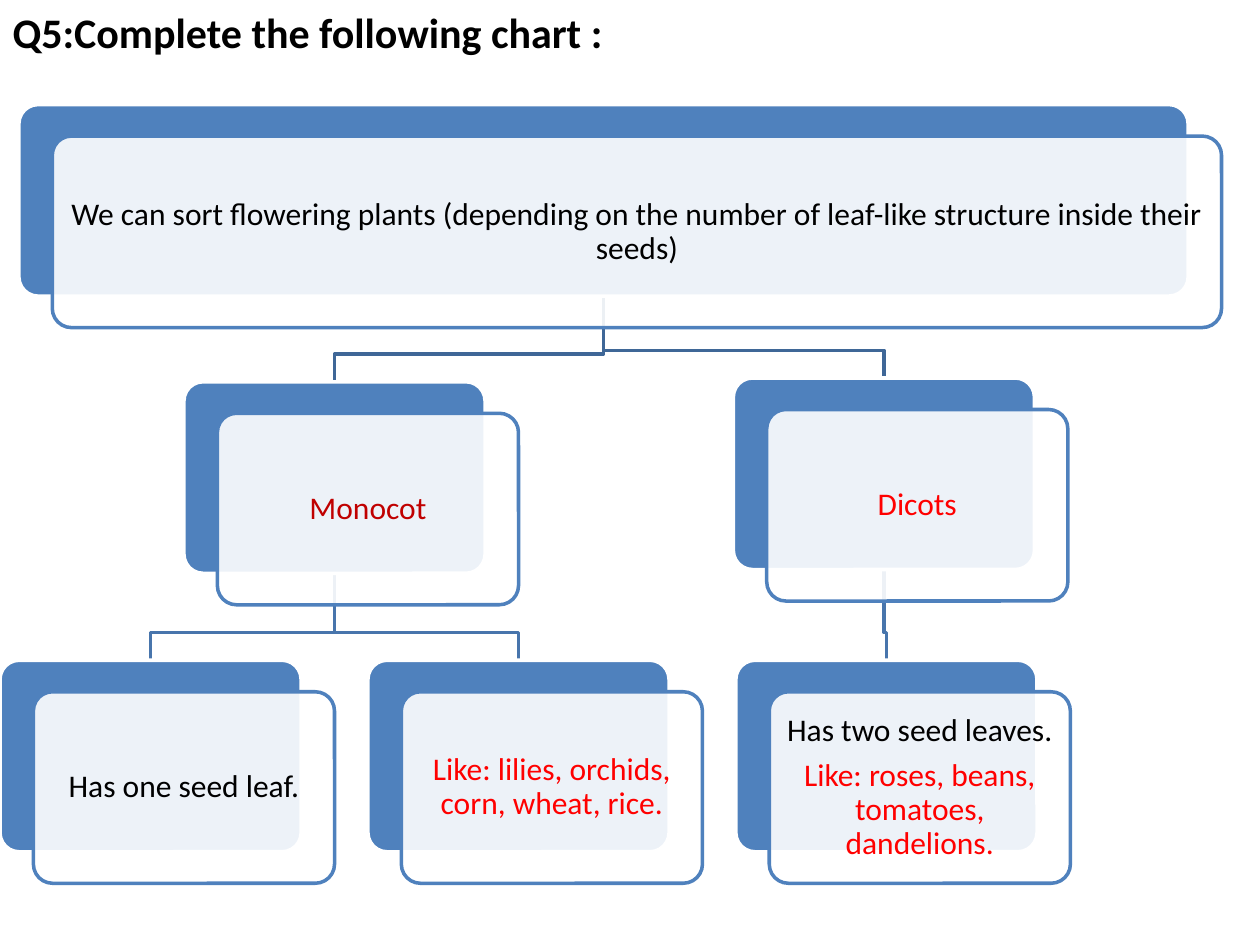
import pptx
import pptx.dml.color
import pptx.enum.shapes
import pptx.enum.text
import pptx.util
from lxml import etree

Inches = pptx.util.Inches
Pt = pptx.util.Pt

THEME = {
    "font": "Calibri",
    "title_size": 24,
    "card_size": 18,
    "line_width": 2,
    "black": "000000",
    "white": "FFFFFF",
    "red": "FF0000",
    "dark_red": "C00000",
    "blue": "4F81BD",
    "upper_link": "3F6797",
    "lower_link": "4875AC",
}

SLIDE_WIDTH, SLIDE_HEIGHT = 10, 7.5
CARD_WIDTH, ROOT_WIDTH, CARD_HEIGHT = 2.39, 9.28, 1.52
COLUMN_STEP, LEAF_TOP = 2.92, 5.24
FACE_SHIFT_X, FACE_SHIFT_Y = 0.265, 0.25
BEND_HEIGHT = 0.22

TITLE = "Q5:Complete the following chart :"
CARDS = {
    "root": (0.15, 0.83, ROOT_WIDTH, [
        ("We can sort flowering plants (depending on the number of "
         "leaf-like structure inside their seeds)", "black")]),
    "monocot": (COLUMN_STEP / 2, 3.03, CARD_WIDTH, [("Monocot", "dark_red")]),
    "one leaf": (0, LEAF_TOP, CARD_WIDTH, [("Has one seed leaf.", "black")]),
    "monocot examples": (COLUMN_STEP, LEAF_TOP, CARD_WIDTH, [
        ("Like: lilies, orchids, corn, wheat, rice.", "red")]),
    "dicots": (5.82, 3, CARD_WIDTH, [("Dicots", "red")]),
    "two leaves": (2 * COLUMN_STEP, LEAF_TOP, CARD_WIDTH, [
        ("Has two seed leaves.", "black"),
        ("Like: roses, beans, tomatoes, dandelions.", "red")]),
}
LINKS = [
    ("dicots", "two leaves", "lower_link"),
    ("root", "dicots", "upper_link"),
    ("monocot", "monocot examples", "lower_link"),
    ("monocot", "one leaf", "lower_link"),
    ("root", "monocot", "upper_link"),
]


def color(name):
    return pptx.dml.color.RGBColor.from_string(THEME[name])


def format_text(paragraph, size, color_name, bold=False):
    for run in paragraph.runs:
        run.font.name = THEME["font"]
        run.font.size = Pt(THEME[size])
        run.font.bold = bold
        run.font.color.rgb = color(color_name)


def set_line(shape, color_name):
    shape.shadow.inherit = False
    shape.line.color.rgb = color(color_name)
    shape.line.width = Pt(THEME["line_width"])


def add_title(slide):
    title = slide.shapes.title
    title.element.getparent().remove(title.element)
    heading = slide.placeholders[1]
    heading.left = heading.top = 0
    heading.width, heading.height = Inches(SLIDE_WIDTH), Inches(SLIDE_HEIGHT)
    heading.text_frame.text = TITLE
    heading.text_frame.vertical_anchor = pptx.enum.text.MSO_ANCHOR.TOP
    paragraph = heading.text_frame.paragraphs[0]
    paragraph.alignment = pptx.enum.text.PP_ALIGN.LEFT
    paragraph.space_before = Pt(0.2 * THEME["title_size"])
    format_text(paragraph, "title_size", "black", bold=True)


def add_link(slide, parent, child, color_name):
    parent_left, parent_top, parent_width, _ = CARDS[parent]
    child_left, child_top, child_width, _ = CARDS[child]
    start_x = Inches(parent_left + parent_width / 2)
    end_x = Inches(child_left + child_width / 2)
    bend_y = Inches(child_top - BEND_HEIGHT)
    builder = slide.shapes.build_freeform(start_x, Inches(parent_top + CARD_HEIGHT))
    builder.add_line_segments(
        [(start_x, bend_y), (end_x, bend_y), (end_x, Inches(child_top))], close=False)
    link = builder.convert_to_shape()
    link.fill.background()
    set_line(link, color_name)


def add_panel(slide, left, top, width, fill, line):
    panel = slide.shapes.add_shape(
        pptx.enum.shapes.MSO_SHAPE.ROUNDED_RECTANGLE,
        Inches(left), Inches(top), Inches(width), Inches(CARD_HEIGHT))
    panel.adjustments[0] = 0.1
    panel.fill.solid()
    panel.fill.fore_color.rgb = color(fill)
    set_line(panel, line)
    return panel


def add_card(slide, left, top, width, lines):
    add_panel(slide, left, top, width, "blue", "white")
    face = add_panel(slide, left + FACE_SHIFT_X, top + FACE_SHIFT_Y, width, "white", "blue")
    fill_color = face.element.spPr.find(
        pptx.oxml.ns.qn("a:solidFill") + "/" + pptx.oxml.ns.qn("a:srgbClr"))
    etree.SubElement(fill_color, pptx.oxml.ns.qn("a:alpha"), val="90000")
    frame = face.text_frame
    frame.word_wrap = True
    frame.vertical_anchor = pptx.enum.text.MSO_ANCHOR.MIDDLE
    frame.margin_left = frame.margin_right = Inches(0.07)
    frame.margin_top = frame.margin_bottom = Inches(0.07)
    frame.text = "\n".join(text for text, _ in lines)
    for paragraph, (_, color_name) in zip(frame.paragraphs, lines):
        paragraph.alignment = pptx.enum.text.PP_ALIGN.CENTER
        paragraph.line_spacing = 0.9
        paragraph.space_after = Pt(0.35 * THEME["card_size"])
        format_text(paragraph, "card_size", color_name)


def main():
    presentation = pptx.Presentation()
    presentation.slide_width = Inches(SLIDE_WIDTH)
    presentation.slide_height = Inches(SLIDE_HEIGHT)
    slide = presentation.slides.add_slide(presentation.slide_layouts[0])
    add_title(slide)
    for link in LINKS:
        add_link(slide, *link)
    for card in CARDS.values():
        add_card(slide, *card)
    presentation.save("out.pptx")


if __name__ == "__main__":
    main()
